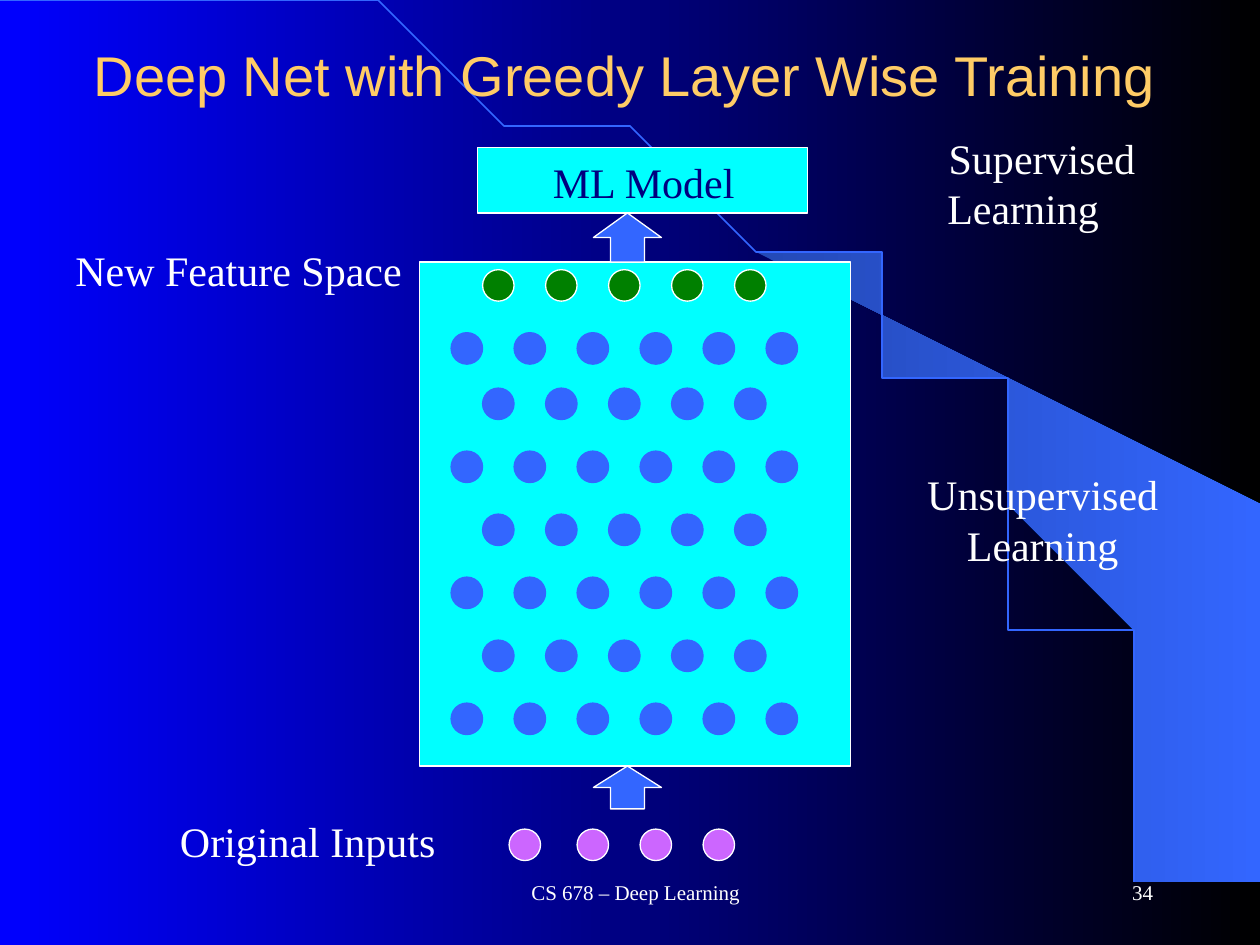
"""Build the slide on greedy layer-wise training of a deep network."""
import math

from pptx import Presentation
from pptx.dml.color import RGBColor
from pptx.enum import shapes, text
from pptx.util import Inches, Pt

WHITE = RGBColor(0xFF, 0xFF, 0xFF)
BLACK = RGBColor(0x00, 0x00, 0x00)
BLUE = RGBColor(0x00, 0x00, 0xFF)
SKY = RGBColor(0x33, 0x66, 0xFF)
STEEL = RGBColor(0x24, 0x49, 0xB6)
NAVY = RGBColor(0x00, 0x00, 0x7F)
CYAN = RGBColor(0x00, 0xFF, 0xFF)
GREEN = RGBColor(0x00, 0x80, 0x00)
VIOLET = RGBColor(0xCC, 0x66, 0xFF)
GOLD = RGBColor(0xFF, 0xCC, 0x66)

LEFT, CENTER, RIGHT = text.PP_ALIGN.LEFT, text.PP_ALIGN.CENTER, text.PP_ALIGN.RIGHT
RECT = shapes.MSO_SHAPE.RECTANGLE
OVAL = shapes.MSO_SHAPE.OVAL
ARROW = shapes.MSO_SHAPE.UP_ARROW

TITLE = "Deep Net with Greedy Layer Wise Training"
FOOTERS = [
    ("CS 678 – Deep Learning", (3.17, 6.83, 3.75, 0.5), CENTER),
    ("34", (7.17, 6.83, 2.08, 0.5), RIGHT),
]
LABELS = [
    (["ML Model"], (4.29, 1.19, 1.66, 0.5), NAVY, [LEFT]),
    (["New Feature Space"], (0.5, 1.89, 2.83, 0.5), WHITE, [LEFT]),
    (["Original Inputs"], (1.33, 6.42, 2.25, 0.5), WHITE, [LEFT]),
    (["Supervised", "Learning"], (7.42, 1, 1.7, 0.91), WHITE, [CENTER, LEFT]),
    (["Unsupervised", "Learning"], (7.25, 3.67, 2.05, 0.91), WHITE, [CENTER, CENTER]),
]
BLOCKS = [
    (RECT, (3.33, 2.08, 3.42, 4), CYAN),
    (ARROW, (4.71, 1.69, 0.54, 0.39), SKY),
    (ARROW, (4.71, 6.08, 0.54, 0.34), SKY),
    (RECT, (3.79, 1.17, 2.62, 0.52), CYAN),
]
NODE, PITCH = 0.25, 0.5
HIDDEN_TOPS = [2.64, 3.08, 3.58, 4.08, 4.58, 5.08, 5.58]
FEATURE_TOP = 2.14
INPUT_TOP, INPUT_LEFTS = 6.58, [4.04, 4.58, 5.08, 5.58]
WIDE_ROW, NARROW_ROW = (3.58, 6), (3.83, 5)
SWOOSH = [
    (9.2, 7.48), (9.99, 7.49), (9.99, 4.23), (5.89, 1.73), (6.24, 1.99), (6.53, 2.22),
    (6.85, 2.5), (7.16, 2.8), (7.62, 3.3), (8.03, 3.84), (8.32, 4.31), (8.58, 4.79),
    (8.78, 5.28), (8.93, 5.72), (9.03, 6.09), (9.13, 6.56), (9.17, 6.96),
]
ARC_W, ARC_H, ARC_STEPS = 9.2, 7.49, 60


def write(sp, lines, *, size, color, font="Times New Roman", aligns=(CENTER,),
          anchor=text.MSO_ANCHOR.MIDDLE, wrap=True):
    tf = sp.text_frame
    tf.word_wrap = wrap
    tf.vertical_anchor = anchor
    tf.auto_size = text.MSO_AUTO_SIZE.NONE if wrap else text.MSO_AUTO_SIZE.SHAPE_TO_FIT_TEXT
    for i, (line, align) in enumerate(zip(lines, aligns)):
        p = tf.add_paragraph() if i else tf.paragraphs[0]
        p.alignment = align
        r = p.add_run()
        r.text = line
        r.font.name, r.font.size, r.font.color.rgb = font, Pt(size), color


def blend(fill, start, end):
    fill.gradient()
    fill.gradient_angle = 0
    for stop, color in zip(fill.gradient_stops, (start, end)):
        stop.color.rgb = color


def add_block(s, kind, box, fill, line=WHITE):
    sp = s.shapes.add_shape(kind, *map(Inches, box))
    sp.shadow.inherit = False
    sp.fill.solid()
    sp.fill.fore_color.rgb = fill
    sp.line.color.rgb = line
    sp.line.width = Pt(0.75)


def add_nodes(s, lefts, top, fill, line=WHITE):
    for left in lefts:
        add_block(s, OVAL, (left, top, NODE, NODE), fill, line)


def row_lefts(row):
    start, count = row
    return [start + PITCH * i for i in range(count)]


def add_outline(s, points, close):
    builder = s.shapes.build_freeform(*points[0], scale=Inches(1))
    builder.add_line_segments(points[1:], close=close)
    sp = builder.convert_to_shape()
    sp.shadow.inherit = False
    return sp


def add_backdrop(s):
    blend(s.background.fill, BLUE, BLACK)
    swoosh = add_outline(s, SWOOSH, True)
    blend(swoosh.fill, STEEL, SKY)
    swoosh.line.fill.background()
    angles = [math.pi / 2 * i / ARC_STEPS for i in range(ARC_STEPS + 1)]
    arc = add_outline(
        s, [(ARC_W * math.sin(a), ARC_H * (1 - math.cos(a))) for a in angles], False)
    arc.fill.background()
    arc.line.color.rgb = SKY
    arc.line.width = Pt(1)


def main():
    prs = Presentation()
    prs.slide_width, prs.slide_height = Inches(10), Inches(7.5)
    s = prs.slides.add_slide(prs.slide_layouts[5])
    add_backdrop(s)

    title = s.shapes.title
    title.left, title.top, title.width, title.height = map(Inches, (0.5, 0, 8.92, 1.17))
    write(title, [TITLE], size=32, color=GOLD, font="Arial")
    title.element.getparent().append(title.element)

    for line, box, align in FOOTERS:
        sp = s.shapes.add_textbox(*map(Inches, box))
        write(sp, [line], size=12, color=WHITE, aligns=[align])

    for kind, box, fill in BLOCKS:
        add_block(s, kind, box, fill)
    add_nodes(s, row_lefts(NARROW_ROW), FEATURE_TOP, GREEN)
    for i, top in enumerate(HIDDEN_TOPS):
        add_nodes(s, row_lefts(NARROW_ROW if i % 2 else WIDE_ROW), top, SKY, SKY)
    add_nodes(s, INPUT_LEFTS, INPUT_TOP, VIOLET)

    for lines, box, color, aligns in LABELS:
        sp = s.shapes.add_textbox(*map(Inches, box))
        write(sp, lines, size=24, color=color, aligns=aligns,
              anchor=text.MSO_ANCHOR.TOP, wrap=False)

    prs.save("out.pptx")


if __name__ == "__main__":
    main()
